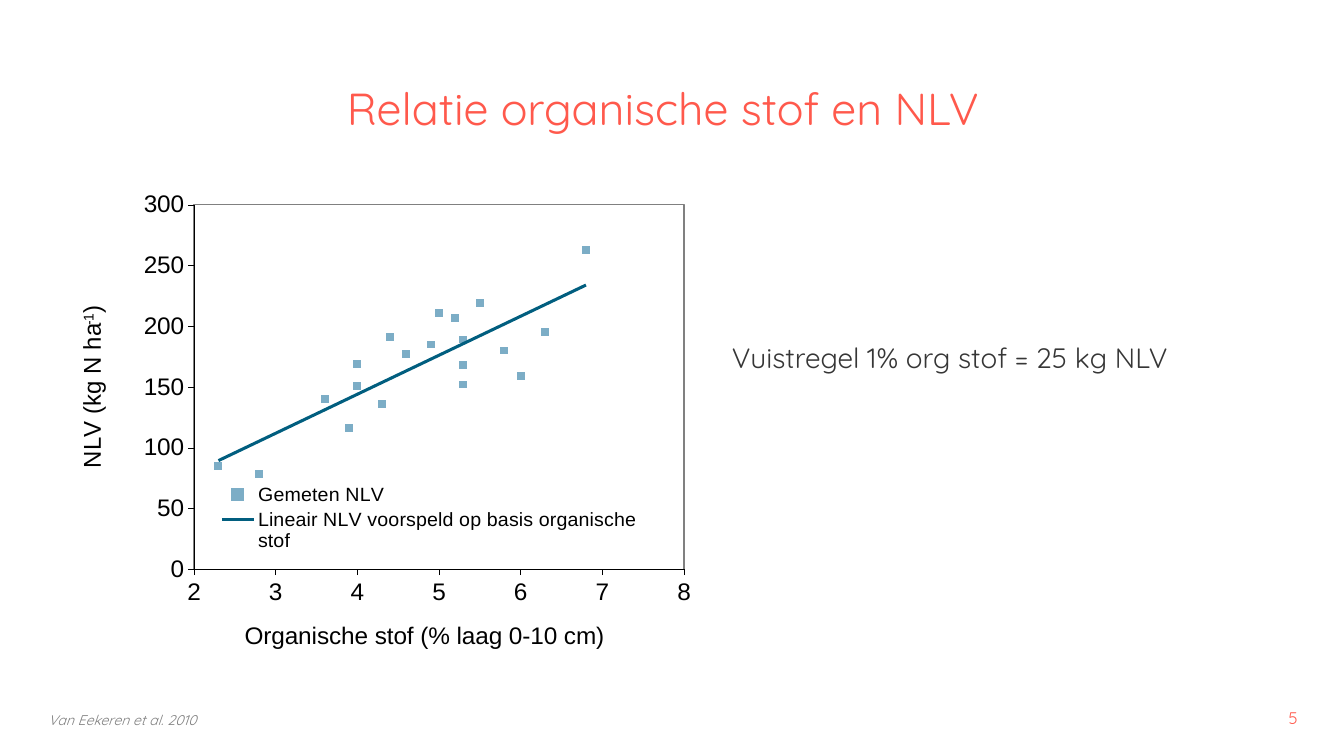
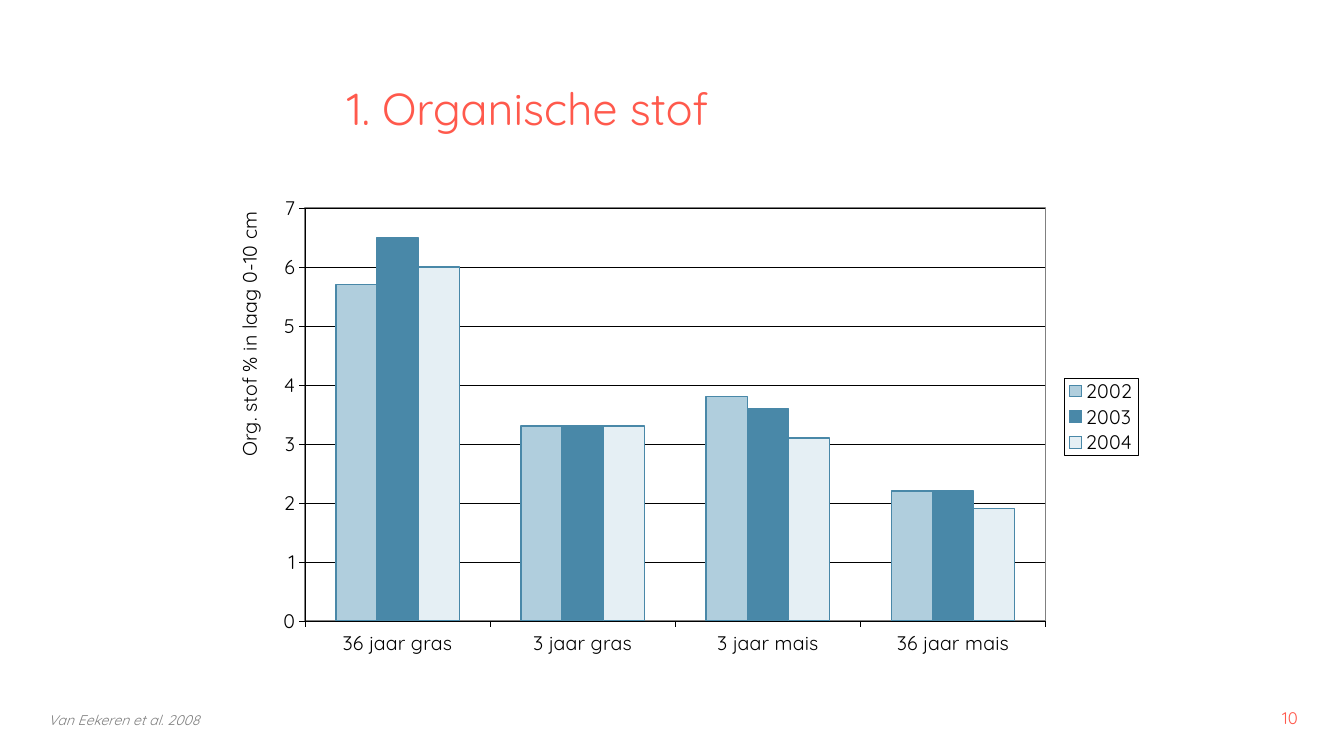
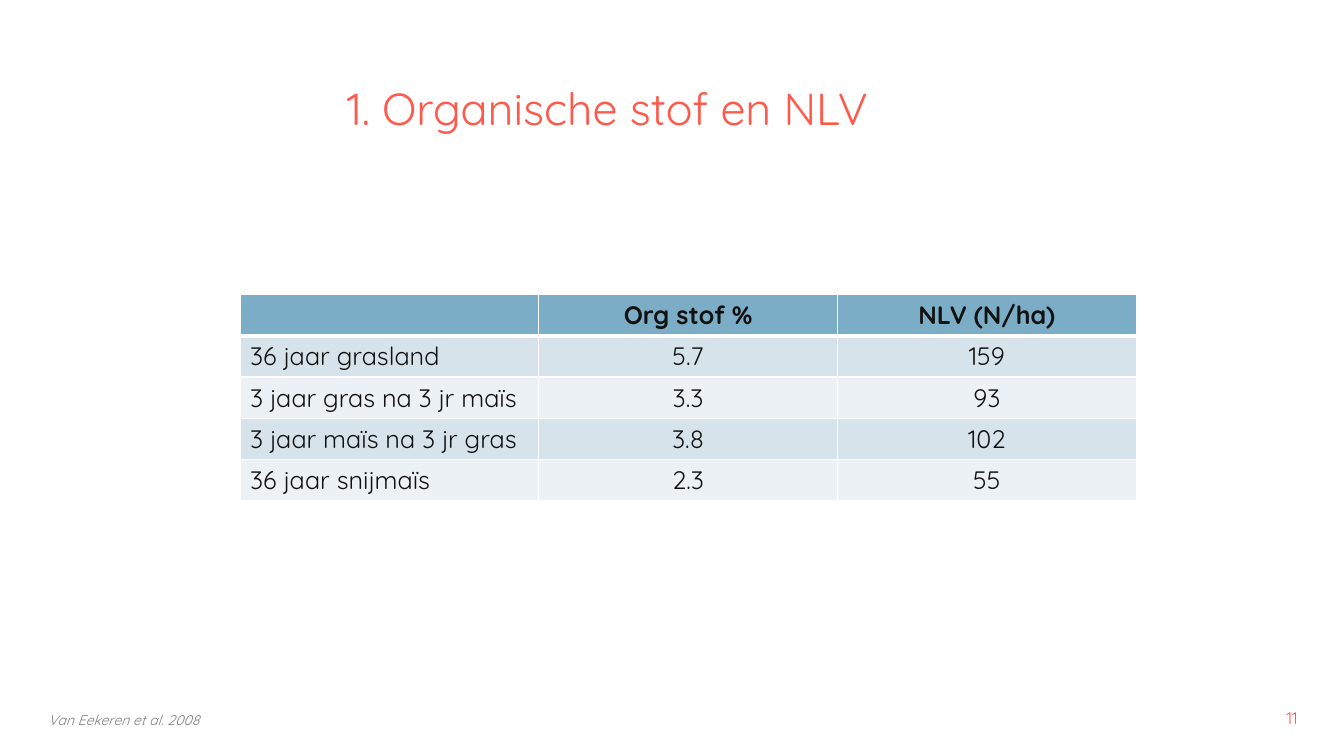
from dataclasses import dataclass
from typing import Optional

from pptx import Presentation
from pptx import chart as chart_package
from pptx import util as u
from pptx.chart import data as chart_data
from pptx.chart.chart import Chart
from pptx.dml.color import RGBColor
from pptx.enum import chart as ch
from pptx.enum import text as t
from pptx.oxml import parse_xml
from pptx.oxml.ns import nsdecls, qn
from pptx.slide import Slide

CORAL = RGBColor(0xFF, 0x59, 0x4C)
DARK = RGBColor(0x36, 0x36, 0x36)
INK = RGBColor(0x11, 0x11, 0x11)
BLACK = RGBColor(0, 0, 0)
GRAY = RGBColor(0x80, 0x80, 0x80)
WHITE = RGBColor(0xFF, 0xFF, 0xFF)
SKY = RGBColor(0x7C, 0xAD, 0xC6)
PETROL = RGBColor(0x01, 0x5E, 0x7F)
BLUE = RGBColor(0x49, 0x88, 0xA8)
LIGHT_BLUE = RGBColor(0xB0, 0xCE, 0xDD)
PALE_BLUE = RGBColor(0xE5, 0xEF, 0xF4)
BANDS = (RGBColor(0xD7, 0xE3, 0xEA), RGBColor(0xEC, 0xF1, 0xF5))

FONT = "Quicksand"
CHART_FONT = "Arial"

MEASURED = [
    (5.2, 207), (5.3, 152), (3.6, 140), (3.9, 116), (5.3, 189),
    (6.8, 263), (4, 169), (5, 211), (4.4, 191), (4.9, 185),
    (4.6, 177), (5.8, 180), (4.3, 136), (6, 159), (2.8, 78),
    (5.3, 168), (6.3, 195), (5.5, 219), (4, 151), (2.3, 85),
]
CROPS = ["36 jaar gras", "3 jaar gras", "3 jaar mais", "36 jaar mais"]
YEARS = [
    ("2002", (5.7, 3.3, 3.8, 2.2), LIGHT_BLUE),
    ("2003", (6.5, 3.3, 3.6, 2.2), BLUE),
    ("2004", (6, 3.3, 3.1, 1.9), PALE_BLUE),
]
TABLE_ROWS = [
    ("", "Org stof %", "NLV (N/ha)"),
    ("36 jaar grasland", "5.7", "159"),
    ("3 jaar gras na 3 jr maïs", "3.3", "93"),
    ("3 jaar maïs na 3 jr gras", "3.8", "102"),
    ("36 jaar snijmaïs", "2.3", "55"),
]


@dataclass(frozen=True)
class Area:
    left: float
    top: float
    width: float
    height: float

    def lengths(self) -> tuple:
        return tuple(u.Inches(v) for v in (self.left, self.top, self.width, self.height))


@dataclass(frozen=True)
class Style:
    size: float
    color: RGBColor
    name: str = FONT
    bold: bool = False
    italic: bool = False

    def apply(self, font) -> None:
        font.size = u.Pt(self.size)
        font.name = self.name
        font.bold = self.bold
        font.italic = self.italic
        font.color.rgb = self.color


@dataclass(frozen=True)
class Scale:
    low: float
    high: float
    step: float


TITLE = Style(32, CORAL)
BODY = Style(20, DARK)
SOURCE = Style(10, GRAY, italic=True)
NUMBER = Style(12, CORAL)
CELL = Style(18, INK)
HEADER = Style(18, INK, bold=True)
SCATTER_AXIS = Style(17.4, BLACK, CHART_FONT)
SCATTER_LEGEND = Style(14, BLACK, CHART_FONT)
COLUMN_TEXT = Style(14, BLACK)


def clear_insets(frame) -> None:
    frame.margin_left = frame.margin_right = frame.margin_top = frame.margin_bottom = 0


def add_text(page: Slide, area: Area, words: str, style: Style, inset: bool = False):
    box = page.shapes.add_textbox(*area.lengths())
    frame = box.text_frame
    frame.word_wrap = True
    if not inset:
        clear_insets(frame)
    para = frame.paragraphs[0]
    para.text = words
    style.apply(para.font)
    return para


def add_page(deck, title: str, source: str, number: int) -> Slide:
    """Add a slide with its title, source line and slide number."""
    page = deck.slides.add_slide(deck.slide_layouts[5])
    heading = page.shapes.title
    heading.left, heading.top, heading.width, heading.height = Area(3.44, 0.53, 9.41, 0.81).lengths()
    frame = heading.text_frame
    frame.text = title
    frame.word_wrap = True
    frame.auto_size = t.MSO_AUTO_SIZE.NONE
    frame.vertical_anchor = t.MSO_ANCHOR.BOTTOM
    clear_insets(frame)
    para = frame.paragraphs[0]
    para.alignment = t.PP_ALIGN.LEFT
    para.line_spacing = 0.9
    TITLE.apply(para.font)
    add_text(page, Area(0.48, 7.06, 10.46, 0.28), source, SOURCE)
    label = add_text(page, Area(12.42, 6.97, 0.55, 0.3), str(number), NUMBER, inset=True)
    label.alignment = t.PP_ALIGN.RIGHT
    return page


def set_layout(part, left: float, top: float, size: Optional[tuple] = None, inner: bool = False) -> None:
    """Place a chart part by fractions of the chart's width and height."""
    old = part.find(qn("c:layout"))
    if old is not None:
        part.remove(old)
    values = [("x", left), ("y", top)] + list(zip("wh", size or ()))
    target = '<c:layoutTarget val="inner"/>' if inner else ""
    modes = '<c:xMode val="edge"/><c:yMode val="edge"/>'
    numbers = "".join(f'<c:{key} val="{value}"/>' for key, value in values)
    layout = parse_xml(
        f'<c:layout {nsdecls("c")}><c:manualLayout>{target}{modes}{numbers}</c:manualLayout></c:layout>'
    )
    overlay = part.find(qn("c:overlay"))
    part.insert(0 if overlay is None else part.index(overlay), layout)


def format_plot(chart: Chart, left: float, top: float, width: float, height: float) -> None:
    area = next(chart._chartSpace.iter(qn("c:plotArea")))
    set_layout(area, left, top, (width, height), inner=True)
    area.append(parse_xml(
        f'<c:spPr {nsdecls("c", "a")}><a:solidFill><a:srgbClr val="{WHITE}"/></a:solidFill>'
        f'<a:ln w="12700"><a:solidFill><a:srgbClr val="{GRAY}"/></a:solidFill></a:ln></c:spPr>'
    ))


def format_axis(axis, style: Style, scale: Optional[Scale] = None) -> None:
    axis.has_major_gridlines = False
    axis.major_tick_mark = ch.XL_TICK_MARK.OUTSIDE
    axis.minor_tick_mark = ch.XL_TICK_MARK.NONE
    axis.format.line.color.rgb = BLACK
    axis.format.line.width = u.Pt(0.25)
    style.apply(axis.tick_labels.font)
    if scale:
        axis.minimum_scale, axis.maximum_scale = scale.low, scale.high
        axis.major_unit = scale.step
        axis.tick_labels.number_format = "0"
        axis.tick_labels.number_format_is_linked = False


def add_axis_title(axis, words: str, style: Style, left: float, top: float, raised: str = "") -> None:
    title = axis.axis_title
    para = title.text_frame.paragraphs[0]
    style.apply(para.font)
    for part in filter(None, (words, raised, ")" if raised else "")):
        span = para.add_run()
        span.text = part
        style.apply(span.font)
        if part == raised:
            span.font._element.set("baseline", "30000")
    set_layout(title._element, left, top)


def add_legend(chart: Chart, style: Style, left: float, top: float, size: tuple):
    chart.has_legend = True
    legend = chart.legend
    legend.position = ch.XL_LEGEND_POSITION.RIGHT
    legend.include_in_layout = False
    style.apply(legend.font)
    set_layout(legend._element, left, top, size)
    return legend


def add_trend_line(series, name: str) -> None:
    series._element.find(qn("c:xVal")).addprevious(parse_xml(
        f'<c:trendline {nsdecls("c", "a")}><c:name>{name}</c:name>'
        f'<c:spPr><a:ln w="{u.Pt(2.17)}"><a:solidFill><a:srgbClr val="{PETROL}"/></a:solidFill></a:ln></c:spPr>'
        '<c:trendlineType val="linear"/><c:dispRSqr val="0"/><c:dispEq val="0"/></c:trendline>'
    ))


def add_scatter(page: Slide) -> None:
    data = chart_data.XyChartData()
    points = data.add_series("Gemeten NLV")
    for organic_matter, nitrogen in MEASURED:
        points.add_data_point(organic_matter, nitrogen)
    chart = page.shapes.add_chart(
        ch.XL_CHART_TYPE.XY_SCATTER, *Area(0.64, 1.8, 9.17, 4.72).lengths(), data
    ).chart
    chart.has_title = False
    SCATTER_LEGEND.apply(chart.font)
    chart.plots[0].vary_by_categories = False
    series = chart.plots[0].series[0]
    series.smooth = False
    series.format.line.fill.background()
    marker = series.marker
    marker.style = ch.XL_MARKER_STYLE.SQUARE
    marker.size = 5
    marker.format.fill.solid()
    marker.format.fill.fore_color.rgb = SKY
    marker.format.line.color.rgb = SKY
    add_trend_line(series, "Lineair NLV voorspeld op basis organische stof")
    format_axis(chart.category_axis, SCATTER_AXIS, Scale(2, 8, 1))
    format_axis(chart.value_axis, SCATTER_AXIS, Scale(0, 300, 50))
    add_axis_title(chart.category_axis, "Organische stof (% laag 0-10 cm)", SCATTER_AXIS, 0.19, 0.93)
    add_axis_title(chart.value_axis, "NLV (kg N ha", SCATTER_AXIS, 0.01, 0.26, raised="-1")
    add_legend(chart, SCATTER_LEGEND, 0.15, 0.64, (0.49, 0.16))
    format_plot(chart, 0.14, 0.05, 0.53, 0.78)


def add_columns(page: Slide) -> None:
    data = chart_data.CategoryChartData()
    data.categories = CROPS
    for year, values, _ in YEARS:
        data.add_series(year, values)
    chart = page.shapes.add_chart(
        ch.XL_CHART_TYPE.COLUMN_CLUSTERED, *Area(2.2, 1.87, 9.18, 4.82).lengths(), data
    ).chart
    chart.has_title = False
    COLUMN_TEXT.apply(chart.font)
    plot = chart.plots[0]
    plot.vary_by_categories = False
    plot.gap_width = 150
    plot.overlap = 0
    for series, (_, _, color) in zip(plot.series, YEARS):
        series.format.fill.solid()
        series.format.fill.fore_color.rgb = color
        series.format.line.color.rgb = BLUE
        series.format.line.width = u.Pt(1)
    format_axis(chart.category_axis, COLUMN_TEXT)
    format_axis(chart.value_axis, COLUMN_TEXT, Scale(0, 7, 1))
    grid = chart.value_axis.major_gridlines.format.line
    grid.color.rgb = BLACK
    grid.width = u.Pt(0.25)
    add_axis_title(chart.value_axis, "Org. stof % in laag 0-10 cm", COLUMN_TEXT, 0.01, 0.04)
    legend = add_legend(chart, COLUMN_TEXT, 0.91, 0.39, (0.08, 0.16))
    legend._element.find(qn("c:overlay")).addnext(parse_xml(
        f'<c:spPr {nsdecls("c", "a")}><a:ln w="3175"><a:solidFill>'
        f'<a:srgbClr val="{BLACK}"/></a:solidFill></a:ln></c:spPr>'
    ))
    format_plot(chart, 0.09, 0.04, 0.8, 0.85)


def add_borders(cell, header: bool) -> None:
    properties = cell._tc.get_or_add_tcPr()
    for side in "LRTB":
        width = u.Pt(3 if header and side == "B" else 1)
        properties.append(parse_xml(
            f'<a:ln{side} {nsdecls("a")} w="{width}"><a:solidFill>'
            f'<a:srgbClr val="{WHITE}"/></a:solidFill></a:ln{side}>'
        ))


def add_nitrogen_table(page: Slide) -> None:
    table = page.shapes.add_table(
        len(TABLE_ROWS), len(TABLE_ROWS[0]), *Area(2.38, 2.92, 8.89, 2.05).lengths()
    ).table
    for row, values in enumerate(TABLE_ROWS):
        header = row == 0
        for column, words in enumerate(values):
            cell = table.cell(row, column)
            add_borders(cell, header)
            cell.fill.solid()
            cell.fill.fore_color.rgb = SKY if header else BANDS[(row - 1) % 2]
            para = cell.text_frame.paragraphs[0]
            para.text = words
            para.alignment = t.PP_ALIGN.CENTER if column else t.PP_ALIGN.LEFT
            (HEADER if header else CELL).apply(para.font)


def main() -> None:
    deck = Presentation()
    deck.slide_width, deck.slide_height = u.Inches(13.33), u.Inches(7.5)

    page = add_page(deck, "Relatie organische stof en NLV", "Van Eekeren et al. 2010", 5)
    add_scatter(page)
    rule = add_text(page, Area(7.26, 3.42, 5.45, 1.3), "Vuistregel 1% org stof = 25 kg NLV", BODY)
    rule.line_spacing = 0.9

    page = add_page(deck, "1. Organische stof", "Van Eekeren et al. 2008", 10)
    add_columns(page)

    page = add_page(deck, "1. Organische stof en NLV", "Van Eekeren et al. 2008", 11)
    add_nitrogen_table(page)

    deck.save("out.pptx")


if __name__ == "__main__":
    main()
